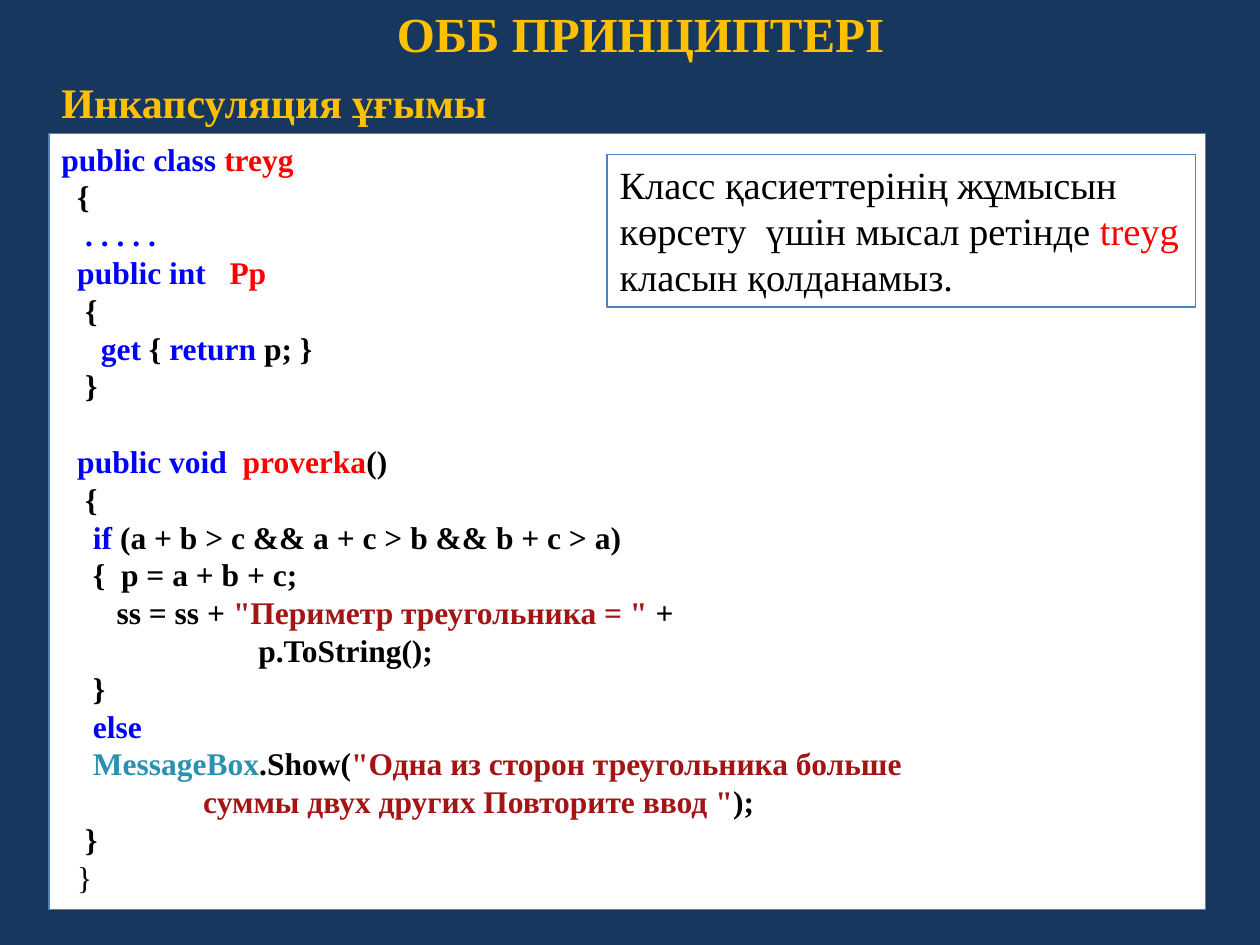
from pptx import Presentation
from pptx.dml.color import RGBColor
from pptx.enum.shapes import MSO_SHAPE
from pptx.enum.text import MSO_ANCHOR, PP_ALIGN
from pptx.util import Cm, Pt

FONT = "Times New Roman"
NAVY, WHITE, BLACK, GOLD, BORDER = "17375E", "FFFFFF", "000000", "FFC000", "4F81BD"
KEYWORD, NAME, STRING, TYPE = "0000FF", "FF0000", "A31515", "2B91AF"
CODE_SIZE = 18
SPACE_WIDTH = CODE_SIZE / 4
LINE_HEIGHT = CODE_SIZE * 1.2

CODE_LINES = [
    (0, [("public class ", KEYWORD), ("treyg", NAME)]),
    (2, [("{", BLACK)]),
    (3, [(". . . . .", KEYWORD)]),
    (2, [("public int   ", KEYWORD), ("Pp", NAME)]),
    (3, [("{", BLACK)]),
    (5, [("get ", KEYWORD), ("{ ", BLACK), ("return", KEYWORD), (" p; }", BLACK)]),
    (3, [("}", BLACK)]),
    (2, [("public void  ", KEYWORD), ("proverka", NAME), ("()", BLACK)]),
    (3, [("{", BLACK)]),
    (4, [("if", KEYWORD), (" (a + b > c && a + c > b && b + c > a)", BLACK)]),
    (4, [("{  p = a + b + c;", BLACK)]),
    (7, [("ss = ss + ", BLACK), ('"Периметр треугольника = "', STRING), (" +", BLACK)]),
    (25, [("p.ToString();", BLACK)]),
    (4, [("}", BLACK)]),
    (4, [("else", KEYWORD)]),
    (4, [("MessageBox", TYPE), (".Show(", BLACK),
         ('"Одна из сторон треугольника больше', STRING)]),
    (18, [('суммы двух других Повторите ввод "', STRING), (");", BLACK)]),
    (3, [("}", BLACK)]),
    (2, [("}", BLACK)]),
]
METHOD_START = 7
NOTE = [
    ("Класс қасиеттерінің жұмысын көрсету  үшін мысал ретінде ", BLACK),
    ("treyg", NAME),
    (" класын қолданамыз.", BLACK),
]


def color(value):
    """Return the colour for a hex string."""
    return RGBColor.from_string(value)


def add_spans(para, spans, size, bold):
    """Add coloured runs to a paragraph."""
    para.alignment = PP_ALIGN.LEFT
    for text, shade in spans:
        span = para.add_run()
        span.text = text
        span.font.name = FONT
        span.font.size = Pt(size)
        span.font.bold = bold
        span.font.color.rgb = color(shade)


def add_heading(page, place, text, size, wrap):
    """Add a bold gold heading."""
    box = page.shapes.add_textbox(*map(Cm, place))
    box.text_frame.word_wrap = wrap
    add_spans(box.text_frame.paragraphs[0], [(text, GOLD)], size, True)


def add_panel(page, place, fill=None):
    """Add a thinly outlined rectangle and return its text frame."""
    box = page.shapes.add_shape(MSO_SHAPE.RECTANGLE, *map(Cm, place))
    box.shadow.inherit = False
    if fill:
        box.fill.solid()
        box.fill.fore_color.rgb = color(fill)
    else:
        box.fill.background()
    box.line.color.rgb = color(BORDER)
    box.line.width = Pt(0.75)
    box.text_frame.word_wrap = True
    box.text_frame.vertical_anchor = MSO_ANCHOR.TOP
    return box.text_frame


def add_code(page, place):
    """Add the code listing with indented lines."""
    frame = add_panel(page, place, WHITE)
    last = len(CODE_LINES) - 1
    for number, (indent, spans) in enumerate(CODE_LINES):
        para = frame.add_paragraph() if number else frame.paragraphs[0]
        properties = para._p.get_or_add_pPr()
        properties.set("marL", str(Pt(indent * SPACE_WIDTH)))
        properties.set("indent", "0")
        if number == METHOD_START:
            para.space_before = Pt(LINE_HEIGHT)
        add_spans(para, spans, CODE_SIZE, number != last)


def main():
    """Build and save the slide."""
    deck = Presentation()
    deck.slide_width, deck.slide_height = Cm(25.4), Cm(19.05)
    page = deck.slides.add_slide(deck.slide_layouts[6])
    page.background.fill.solid()
    page.background.fill.fore_color.rgb = color(NAVY)
    add_heading(page, (7.75, -0.05, 10.44, 1.45), "ОББ ПРИНЦИПТЕРІ", 28, False)
    add_heading(page, (0.99, 1.42, 12.7, 1.27), "Инкапсуляция ұғымы", 24, True)
    add_code(page, (0.99, 2.69, 23.32, 15.65))
    note = add_panel(page, (12.24, 3.12, 11.86, 3.07))
    add_spans(note.paragraphs[0], NOTE, 22, False)
    deck.save("out.pptx")


if __name__ == "__main__":
    main()
